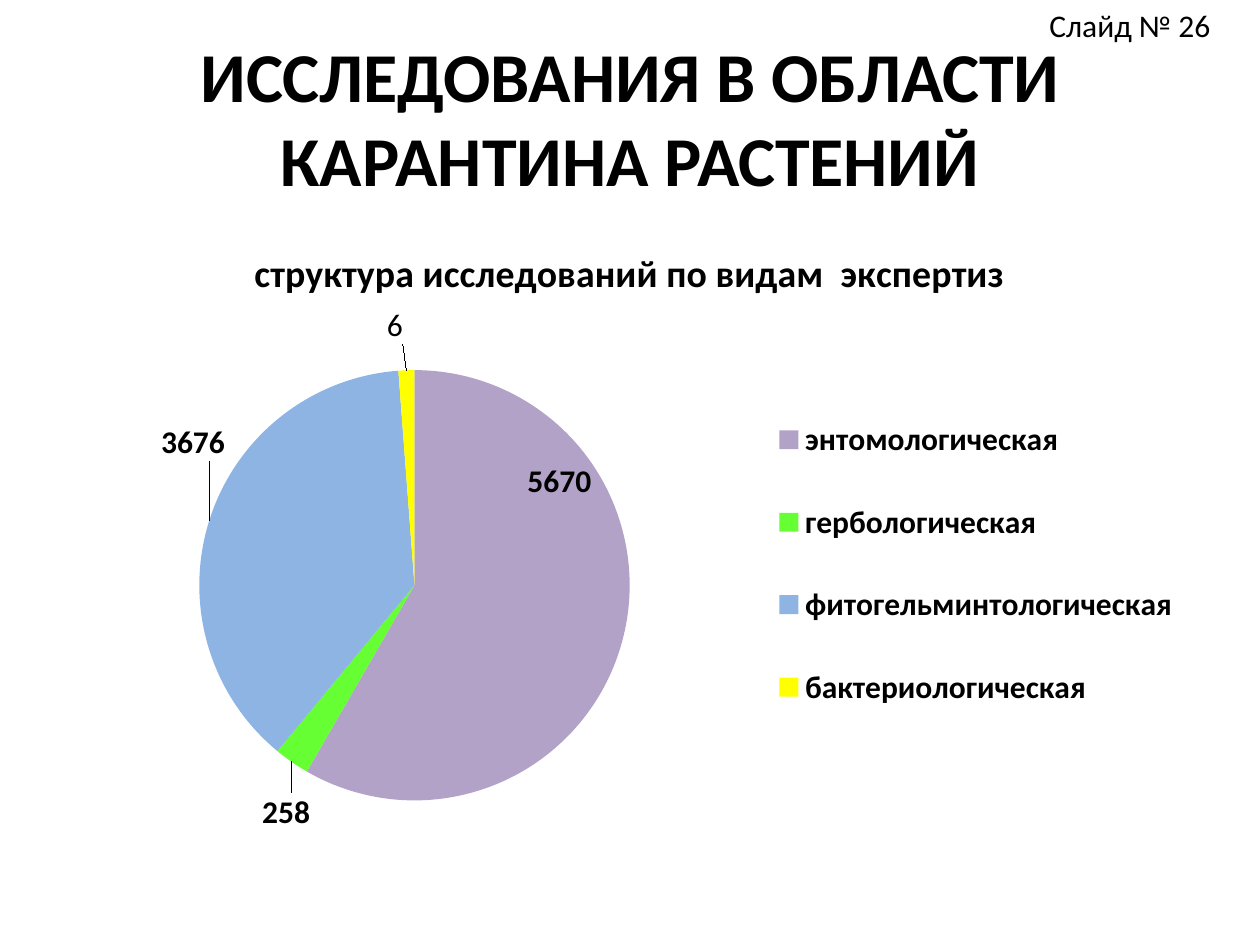
import pptx
import pptx.util
import pptx.chart.data
import pptx.enum.chart
import pptx.enum.text
import pptx.oxml
import pptx.oxml.ns
from dataclasses import dataclass
from pptx.dml.color import RGBColor


@dataclass(frozen=True)
class Theme:
    font: str = "Calibri"
    ink: str = "000000"
    title: float = 40
    chart_title: float = 21.6
    body: float = 18


THEME = Theme()
WIDTH, HEIGHT = 10, 7.5
CHART_TITLE = "структура исследований по видам  экспертиз"

# category, value, colour, label offset as shares of the chart, label text
SLICES = [
    ("энтомологическая", 5670, "B3A2C7", (-0.09, -0.29), None),
    ("гербологическая", 258, "66FF33", (0.02, 0.04), None),
    ("фитогельминтологическая", 3676, "8EB4E3", (0.02, -0.09), None),
    ("бактериологическая", 116, "FFFF00", (-0.01, -0.03), "6"),
]


def share_box(x, y, w, h):
    """Turn shares of the slide into a box of lengths."""
    return [pptx.util.Inches(round(share * side, 2))
            for share, side in zip((x, y, w, h), (WIDTH, HEIGHT) * 2)]


def style_font(font, size, bold=False):
    font.name = THEME.font
    font.size = pptx.util.Pt(size)
    font.bold = bold
    font.color.rgb = RGBColor.from_string(THEME.ink)


def make_layout(x, y, w=None, h=None, inner=False):
    """Manual chart layout: an offset, or a whole box when w and h are given."""
    parts = [("layoutTarget", "inner")] if inner else []
    if w is not None:
        parts += [("xMode", "edge"), ("yMode", "edge")]
    parts += [("x", x), ("y", y)]
    if w is not None:
        parts += [("w", w), ("h", h)]
    body = "".join(f'<c:{tag} val="{val}"/>' for tag, val in parts)
    return pptx.oxml.parse_xml(
        f'<c:layout {pptx.oxml.ns.nsdecls("c")}><c:manualLayout>{body}'
        '</c:manualLayout></c:layout>')


def set_layout(parent, layout, after):
    for old in parent.xpath("./c:layout"):
        parent.remove(old)
    index = 0 if after is None else parent.index(parent.xpath(after)[0]) + 1
    parent.insert(index, layout)


def add_title(s, box):
    title = s.shapes.title
    title.left, title.top, title.width, title.height = box
    tf = title.text_frame
    tf.text = "ИССЛЕДОВАНИЯ В ОБЛАСТИ КАРАНТИНА РАСТЕНИЙ"
    tf.vertical_anchor = pptx.enum.text.MSO_ANCHOR.MIDDLE
    p = tf.paragraphs[0]
    p.alignment = pptx.enum.text.PP_ALIGN.CENTER
    style_font(p.runs[0].font, THEME.title, bold=True)


def add_slide_number(s, box):
    tf = s.shapes.add_textbox(*box).text_frame
    tf.word_wrap = True
    tf.auto_size = pptx.enum.text.MSO_AUTO_SIZE.SHAPE_TO_FIT_TEXT
    tf.text = "Слайд № 26"
    style_font(tf.paragraphs[0].runs[0].font, THEME.body)


def format_slices(series):
    """Colour each slice and place its label."""
    labels = series.data_labels
    labels.show_value = True
    style_font(labels.font, THEME.body, bold=True)
    for i, (_, _, colour, offset, text) in enumerate(SLICES):
        point = series.points[i]
        point.format.fill.solid()
        point.format.fill.fore_color.rgb = RGBColor.from_string(colour)
        label = point.data_label
        if text:
            label.text_frame.text = text
            style_font(label.text_frame.paragraphs[0].runs[0].font, THEME.body)
        else:
            style_font(label.font, THEME.body, bold=True)
        label.position = pptx.enum.chart.XL_LABEL_POSITION.OUTSIDE_END
        xml = series._element.xpath(f"c:dLbls/c:dLbl[c:idx/@val='{i}']")[0]
        set_layout(xml, make_layout(*offset), "./c:idx")


def add_pie(s, box):
    data = pptx.chart.data.CategoryChartData()
    data.categories = [item[0] for item in SLICES]
    data.add_series(CHART_TITLE, [item[1] for item in SLICES])
    chart = s.shapes.add_chart(
        pptx.enum.chart.XL_CHART_TYPE.PIE, *box, data).chart
    style_font(chart.font, THEME.body)

    # Chart title
    chart.has_title = True
    tf = chart.chart_title.text_frame
    tf.text = CHART_TITLE
    style_font(tf.paragraphs[0].runs[0].font, THEME.chart_title, bold=True)

    # Legend to the right of the pie
    chart.has_legend = True
    legend = chart.legend
    legend.position = pptx.enum.chart.XL_LEGEND_POSITION.RIGHT
    legend.include_in_layout = False
    style_font(legend.font, THEME.body, bold=True)
    set_layout(legend._element, make_layout(0.62, 0.25, 0.37, 0.6), "./c:legendPos")

    # Pie
    plot = chart.plots[0]
    plot.vary_by_categories = True
    format_slices(plot.series[0])
    area = chart._chartSpace.xpath("c:chart/c:plotArea")[0]
    set_layout(area, make_layout(0.12, 0.24, 0.38, 0.69, inner=True), None)


def main():
    prs = pptx.Presentation()
    prs.slide_width = pptx.util.Inches(WIDTH)
    prs.slide_height = pptx.util.Inches(HEIGHT)
    s = prs.slides.add_slide(prs.slide_layouts[5])
    add_title(s, share_box(0.05, 0.04, 0.9, 1 / 6))
    add_pie(s, share_box(0.05, 0.2333, 0.9, 0.66))
    add_slide_number(s, share_box(0.823, 0, 0.165, 0.0533))
    prs.save("out.pptx")


if __name__ == "__main__":
    main()
